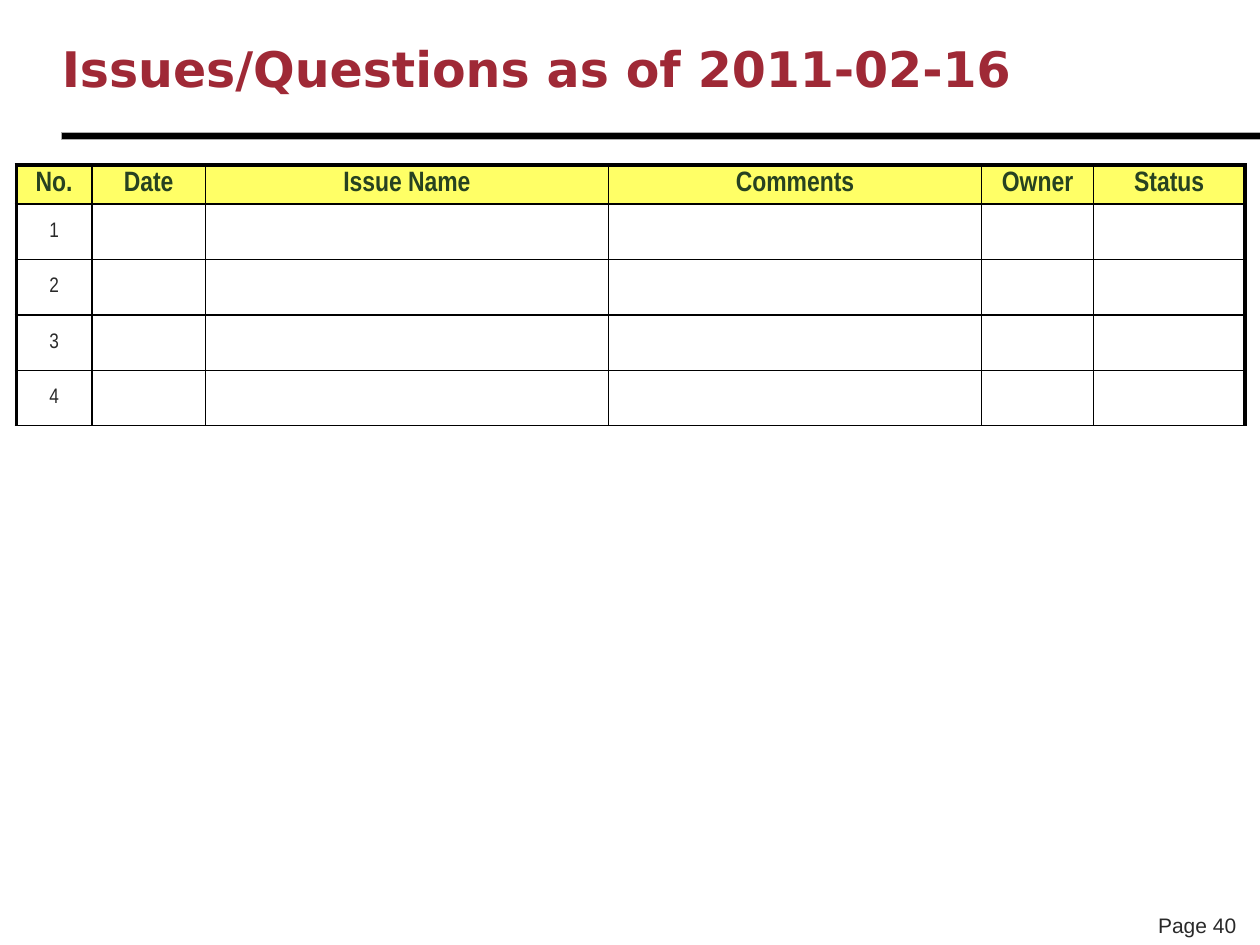
"""Build the issues and questions log slide."""
from dataclasses import dataclass

from lxml import etree
from pptx import Presentation
from pptx.dml.color import RGBColor
from pptx.enum.shapes import MSO_SHAPE
from pptx.enum.text import MSO_ANCHOR, PP_ALIGN
from pptx.oxml.ns import qn
from pptx.util import Inches, Pt

RECT = MSO_SHAPE.RECTANGLE
MIDDLE, BOTTOM = MSO_ANCHOR.MIDDLE, MSO_ANCHOR.BOTTOM
LEFT, CENTER, RIGHT = PP_ALIGN.LEFT, PP_ALIGN.CENTER, PP_ALIGN.RIGHT

BLACK = RGBColor(0x00, 0x00, 0x00)
GRAY = RGBColor(0xAD, 0xAD, 0xAD)
INK = RGBColor(0x29, 0x29, 0x29)
RED = RGBColor(0x9F, 0x29, 0x36)
GREEN = RGBColor(0x27, 0x42, 0x21)
YELLOW = RGBColor(0xFF, 0xFF, 0x66)

TITLE_FONT = {"name": "DejaVu Sans", "size": Pt(28), "bold": True}
HEADER_FONT = {"name": "Arial Narrow", "size": Pt(16), "bold": True}
BODY_FONT = {"name": "Arial Narrow", "size": Pt(12), "bold": False}
PAGE_FONT = {"name": "Arial", "size": Pt(12)}
NO_MARGINS = dict.fromkeys(
    ("margin_left", "margin_right", "margin_top", "margin_bottom"), 0)
HEADER_MARGINS = {"margin_top": Inches(0.02), "margin_bottom": Inches(0.02)}

ISSUE_COUNT = 4
HEADER_HEIGHT, ROW_HEIGHT = 0.31, 0.44
THICK, THIN = Pt(2.25), Pt(1)


@dataclass
class Column:
    heading: str
    width: float


COLUMNS = [
    Column("No.", 0.6),
    Column("Date", 0.9),
    Column("Issue Name", 3.2),
    Column("Comments", 2.96),
    Column("Owner", 0.89),
    Column("Status", 1.2),
]


def apply(target, values: dict) -> None:
    for name, value in values.items():
        setattr(target, name, value)


def write(tf, text: str, font: dict, color: RGBColor, align) -> None:
    p = tf.paragraphs[0]
    p.alignment = align
    r = p.add_run()
    r.text = text
    apply(r.font, font)
    r.font.color.rgb = color


def add_border(cell, side: str, width: int) -> None:
    ln = etree.SubElement(cell._tc.get_or_add_tcPr(), qn(f"a:ln{side}"), w=str(width))
    fill = etree.SubElement(ln, qn("a:solidFill"))
    etree.SubElement(fill, qn("a:srgbClr"), val=str(BLACK))


def format_cell(cell, row: int, col: int) -> None:
    outer = {"L": col == 0, "R": col == len(COLUMNS) - 1, "T": row == 0, "B": False}
    for side, is_outer in outer.items():
        add_border(cell, side, THICK if is_outer else THIN)
    cell.vertical_anchor = MIDDLE
    if row == 0:
        apply(cell, HEADER_MARGINS)
        cell.fill.solid()
        cell.fill.fore_color.rgb = YELLOW
        write(cell.text_frame, COLUMNS[col].heading, HEADER_FONT, GREEN, CENTER)
        return
    cell.fill.background()
    if col == 0:
        write(cell.text_frame, str(row), BODY_FONT, INK, CENTER)


def add_issue_table(s) -> None:
    width = sum(c.width for c in COLUMNS)
    height = HEADER_HEIGHT + ISSUE_COUNT * ROW_HEIGHT
    table = s.shapes.add_table(ISSUE_COUNT + 1, len(COLUMNS), Inches(0.13), Inches(1.31),
                               Inches(width), Inches(height)).table
    apply(table, {"first_row": False, "horz_banding": False})
    for col, column in enumerate(COLUMNS):
        table.columns[col].width = Inches(column.width)
    for row in range(ISSUE_COUNT + 1):
        table.rows[row].height = Inches(ROW_HEIGHT if row else HEADER_HEIGHT)
        for col in range(len(COLUMNS)):
            format_cell(table.cell(row, col), row, col)


def add_title(s, text: str) -> None:
    sp = s.shapes.title
    apply(sp, {"left": Inches(0.49), "top": Inches(0.13),
               "width": Inches(8.5), "height": Inches(0.82)})
    apply(sp.text_frame, NO_MARGINS | {"vertical_anchor": MIDDLE, "word_wrap": True})
    write(sp.text_frame, text, TITLE_FONT, RED, LEFT)


def add_rule(s) -> None:
    sp = s.shapes.add_shape(RECT, Inches(0.49), Inches(1.05), Inches(9.52), Inches(0.06))
    sp.shadow.inherit = False
    sp.fill.solid()
    sp.fill.fore_color.rgb = BLACK
    sp.line.color.rgb = GRAY
    sp.line.width = Pt(0.75)


def add_page_number(s, text: str) -> None:
    sp = s.shapes.add_textbox(Inches(8.82), Inches(7.19), Inches(1.09), Inches(0.3))
    apply(sp.text_frame, {"word_wrap": True, "vertical_anchor": BOTTOM})
    write(sp.text_frame, text, PAGE_FONT, INK, RIGHT)


def main() -> None:
    prs = Presentation()
    prs.slide_width, prs.slide_height = Inches(10), Inches(7.5)
    s = prs.slides.add_slide(prs.slide_layouts[5])
    add_page_number(s, "Page 40")
    add_rule(s)
    add_title(s, "Issues/Questions as of 2011-02-16")
    add_issue_table(s)
    prs.save("out.pptx")


if __name__ == "__main__":
    main()
